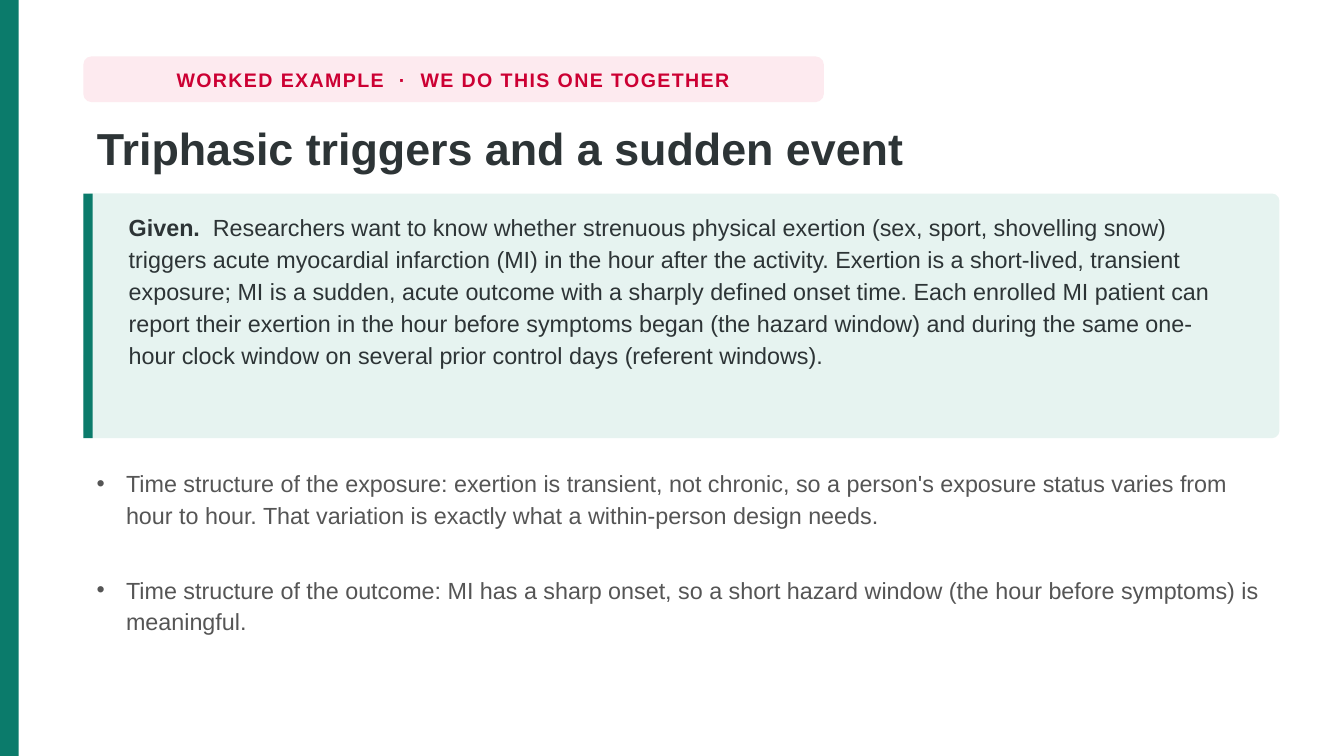
from lxml import etree
from pptx import Presentation
from pptx.dml.color import RGBColor
from pptx.enum import shapes, text
from pptx.oxml.ns import qn
from pptx.util import Inches, Pt

COLOURS = {
    "teal": "0B7B6B", "mint": "E6F3F0", "blush": "FDEAEF",
    "crimson": "CC0033", "ink": "2D3436", "grey": "555555",
}
FONT = "Arial"
LEFT, WIDTH = 0.62, 8.9
SLIDE_WIDTH = 10
SLIDE_HEIGHT = SLIDE_WIDTH * 9 / 16
CARD_TOP, CARD_HEIGHT = 1.44, 1.82
INDENT = 0.22

BADGE = "WORKED EXAMPLE  ·  WE DO THIS ONE TOGETHER"
TITLE = "Triphasic triggers and a sudden event"
GIVEN_LABEL = "Given.  "
GIVEN = (
    "Researchers want to know whether strenuous physical exertion (sex, sport, "
    "shovelling snow) triggers acute myocardial infarction (MI) in the hour after "
    "the activity. Exertion is a short-lived, transient exposure; MI is a sudden, "
    "acute outcome with a sharply defined onset time. Each enrolled MI patient can "
    "report their exertion in the hour before symptoms began (the hazard window) "
    "and during the same one-hour clock window on several prior control days "
    "(referent windows)."
)
# top, height, wording
POINTS = [
    (3.42, 0.71,
     "Time structure of the exposure: exertion is transient, not chronic, so a "
     "person's exposure status varies from hour to hour. That variation is exactly "
     "what a within-person design needs."),
    (4.21, 0.49,
     "Time structure of the outcome: MI has a sharp onset, so a short hazard window "
     "(the hour before symptoms) is meaningful."),
]


def rgb(name):
    return RGBColor.from_string(COLOURS[name])


def add_panel(slide, box, colour, radius=None):
    """Add a borderless filled rectangle, rounded when a radius ratio is given."""
    kind = shapes.MSO_SHAPE.RECTANGLE if radius is None else shapes.MSO_SHAPE.ROUNDED_RECTANGLE
    panel = slide.shapes.add_shape(kind, *map(Inches, box))
    if radius is not None:
        panel.adjustments[0] = radius
    panel.shadow.inherit = False
    panel.fill.solid()
    panel.fill.fore_color.rgb = rgb(colour)
    panel.line.fill.background()
    return panel


def add_text_box(slide, box):
    frame = slide.shapes.add_textbox(*map(Inches, box)).text_frame
    frame.word_wrap = True
    return frame.paragraphs[0]


def style(paragraph, size, colour, bold=False, spacing=None):
    font = paragraph.font
    font.name, font.size, font.bold = FONT, Pt(size), bold
    font.color.rgb = rgb(colour)
    if spacing:
        paragraph.line_spacing = spacing


def add_bullet(paragraph):
    properties = paragraph._p.get_or_add_pPr()
    properties.set("marL", str(Inches(INDENT)))
    properties.set("indent", str(-Inches(INDENT)))
    etree.SubElement(properties, qn("a:buFont"), typeface=FONT)
    etree.SubElement(properties, qn("a:buChar"), char="•")


def add_badge(slide):
    badge = add_panel(slide, (LEFT, 0.42, 5.51, 0.34), "blush", 0.18)
    frame = badge.text_frame
    frame.word_wrap = False
    frame.vertical_anchor = text.MSO_ANCHOR.MIDDLE
    paragraph = frame.paragraphs[0]
    paragraph.alignment = text.PP_ALIGN.CENTER
    run = paragraph.add_run()
    run.text = BADGE
    style(paragraph, 10.5, "crimson", bold=True)
    run._r.get_or_add_rPr().set("spc", "80")


def set_title(slide):
    title = slide.shapes.title
    title.left, title.top, title.width, title.height = map(Inches, (LEFT, 0.84, WIDTH, 0.56))
    frame = title.text_frame
    frame.text = TITLE
    frame.word_wrap = True
    frame.auto_size = text.MSO_AUTO_SIZE.NONE
    frame.vertical_anchor = text.MSO_ANCHOR.TOP
    frame.paragraphs[0].alignment = text.PP_ALIGN.LEFT
    style(frame.paragraphs[0], 24, "ink", bold=True, spacing=1.02)


def add_given_card(slide):
    add_panel(slide, (LEFT, CARD_TOP, WIDTH, CARD_HEIGHT), "mint", 0.03)
    add_panel(slide, (LEFT, CARD_TOP, 0.07, CARD_HEIGHT), "teal")
    paragraph = add_text_box(slide, (0.86, CARD_TOP + 0.07, 8.4, CARD_HEIGHT - 0.14))
    label = paragraph.add_run()
    label.text = GIVEN_LABEL
    label.font.bold = True
    paragraph.add_run().text = GIVEN
    style(paragraph, 12.5, "ink", spacing=1.14)


def main():
    presentation = Presentation()
    presentation.slide_width = Inches(SLIDE_WIDTH)
    presentation.slide_height = Inches(SLIDE_HEIGHT)
    slide = presentation.slides.add_slide(presentation.slide_layouts[5])

    add_panel(slide, (0, 0, 0.14, SLIDE_HEIGHT), "teal")
    add_badge(slide)
    set_title(slide)
    add_given_card(slide)
    for top, height, wording in POINTS:
        paragraph = add_text_box(slide, (LEFT, top, WIDTH, height))
        paragraph.add_run().text = wording
        add_bullet(paragraph)
        style(paragraph, 12.5, "grey", spacing=1.12)

    presentation.save("out.pptx")


if __name__ == "__main__":
    main()
